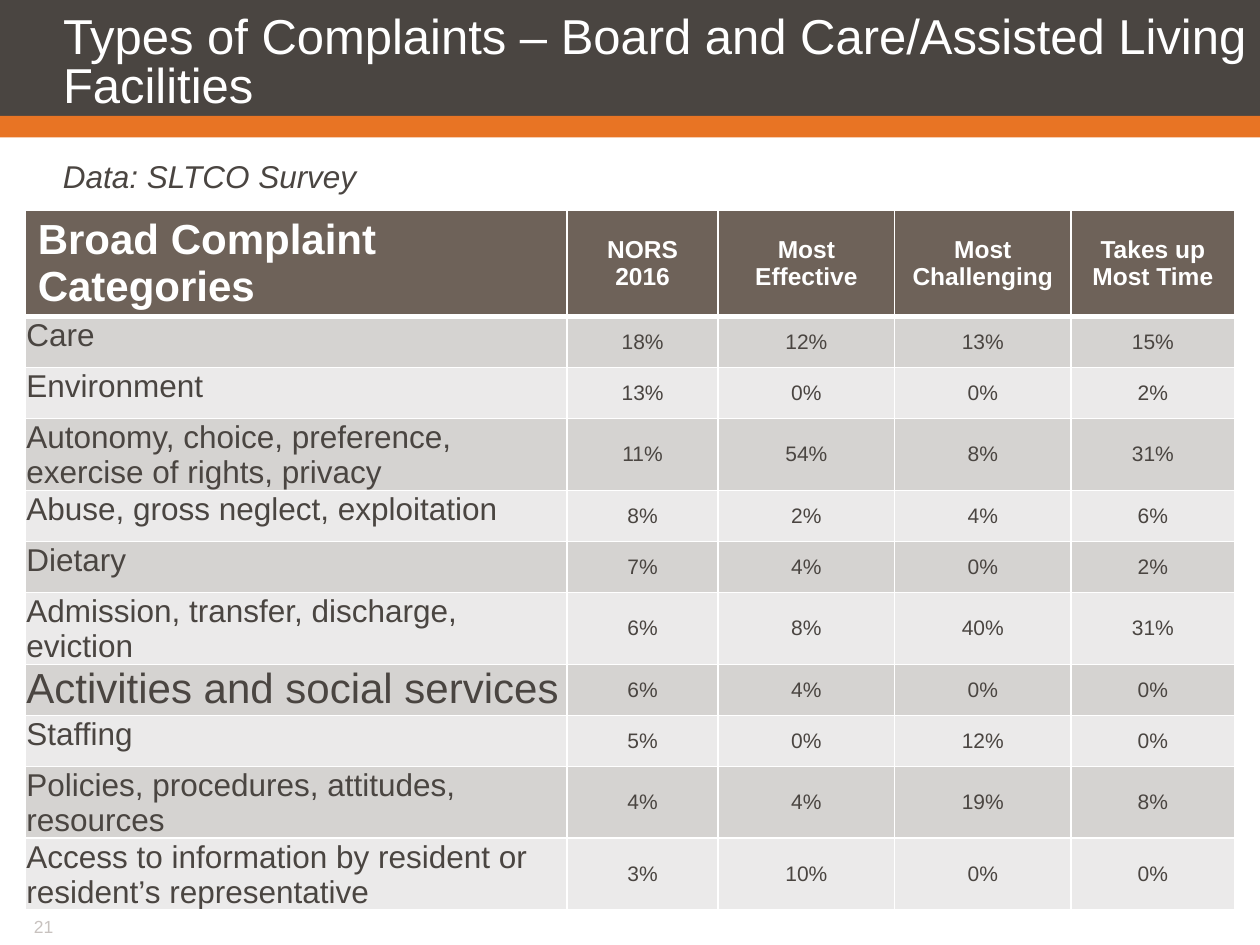
from lxml import etree
from pptx import Presentation
from pptx.dml.color import RGBColor
from pptx.enum.shapes import MSO_SHAPE
from pptx.enum.text import MSO_ANCHOR, MSO_AUTO_SIZE, PP_ALIGN
from pptx.oxml.ns import qn
from pptx.util import Inches, Pt

RECTANGLE = MSO_SHAPE.RECTANGLE
TOP, MIDDLE = MSO_ANCHOR.TOP, MSO_ANCHOR.MIDDLE
LEFT, CENTER = PP_ALIGN.LEFT, PP_ALIGN.CENTER
NO_AUTOFIT = MSO_AUTO_SIZE.NONE
TITLE_ONLY = 5

FONT = "Arial"
WHITE, DARK, ORANGE, GREY = "FFFFFF", "4A4541", "E87424", "C8C2BF"
HEADER_FILL, ODD_FILL, EVEN_FILL = "6E6259", "D5D3D1", "EBEAEA"

CELL_INSETS = (0.1, 0.05, 0.1, 0.05)
LABEL_INSETS = (0.01, 0.01, 0.01, 0)

COLUMN_WIDTHS = [4.3, 1.2, 1.4, 1.4, 1.3]
ROW_HEIGHT = 0.405
HEADINGS = ["Broad Complaint Categories", "NORS 2016", "Most Effective",
            "Most Challenging", "Takes up Most Time"]
COMPLAINTS = [
    ("Care", 18, 12, 13, 15),
    ("Environment", 13, 0, 0, 2),
    ("Autonomy, choice, preference, exercise of rights, privacy", 11, 54, 8, 31),
    ("Abuse, gross neglect, exploitation", 8, 2, 4, 6),
    ("Dietary", 7, 4, 0, 2),
    ("Admission, transfer, discharge, eviction", 6, 8, 40, 31),
    ("Activities and social services", 6, 4, 0, 0),
    ("Staffing", 5, 0, 12, 0),
    ("Policies, procedures, attitudes, resources", 4, 4, 19, 8),
    ("Access to information by resident or resident’s representative", 3, 10, 0, 0),
]
LARGE_LABEL = "Activities and social services"


def rgb(hex_text):
    return RGBColor.from_string(hex_text)


def write(frame, text, size, color, bold=False, italic=False, align=LEFT, line_spacing=None):
    para = frame.paragraphs[0]
    para.alignment = align
    if line_spacing:
        para.line_spacing = Pt(line_spacing)
    span = para.add_run()
    span.text = text
    font = span.font
    font.name, font.size, font.bold, font.italic = FONT, Pt(size), bold, italic
    font.color.rgb = rgb(color)


def set_insets(target, insets):
    """Set left, top, right and bottom margins of a text frame or cell."""
    (target.margin_left, target.margin_top,
     target.margin_right, target.margin_bottom) = map(Inches, insets)


def prepare_frame(frame, insets, anchor=TOP, wrap=True):
    frame.auto_size = NO_AUTOFIT
    frame.word_wrap = wrap
    frame.vertical_anchor = anchor
    set_insets(frame, insets)


def add_band(page, box, color):
    band = page.shapes.add_shape(RECTANGLE, *map(Inches, box))
    band.shadow.inherit = False
    band.fill.solid()
    band.fill.fore_color.rgb = rgb(color)
    band.line.fill.background()


def add_heading(page, box, text, stripe_height):
    left, top, width, height = box
    add_band(page, box, DARK)
    add_band(page, (left, top + height, width, stripe_height), ORANGE)
    title = page.shapes.title
    page.shapes.element.append(title.element)  # bring in front of the bands
    title.left, title.top, title.width, title.height = map(Inches, box)
    prepare_frame(title.text_frame, (0.5, 0.1, 0.1, 0), MIDDLE)
    write(title.text_frame, text, 28, WHITE, line_spacing=28)


def add_text(page, box, text, insets, wrap=True, **text_format):
    frame = page.shapes.add_textbox(*map(Inches, box)).text_frame
    prepare_frame(frame, insets, wrap=wrap)
    write(frame, text, **text_format)


def set_borders(cell, bottom_width):
    properties = cell._tc.get_or_add_tcPr()
    widths = {"a:lnL": 1, "a:lnR": 1, "a:lnT": 1, "a:lnB": bottom_width}
    for position, (tag, width) in enumerate(widths.items()):
        line = etree.Element(qn(tag), w=str(Pt(width)))
        fill = etree.SubElement(line, qn("a:solidFill"))
        etree.SubElement(fill, qn("a:srgbClr"), val=WHITE)
        properties.insert(position, line)


def fill_cell(cell, text, fill, insets=CELL_INSETS, anchor=MIDDLE, bottom_width=1,
              **text_format):
    set_insets(cell, insets)
    cell.vertical_anchor = anchor
    cell.fill.solid()
    cell.fill.fore_color.rgb = rgb(fill)
    set_borders(cell, bottom_width)
    write(cell.text_frame, text, **text_format)


def add_complaint_table(page, box):
    frame = page.shapes.add_table(len(COMPLAINTS) + 1, len(HEADINGS), *map(Inches, box))
    table = frame.table
    for column, width in zip(table.columns, COLUMN_WIDTHS):
        column.width = Inches(width)
    for row in table.rows:
        row.height = Inches(ROW_HEIGHT)

    for index, heading in enumerate(HEADINGS):
        first = index == 0
        fill_cell(table.cell(0, index), heading, HEADER_FILL, bottom_width=3,
                  anchor=TOP if first else MIDDLE, align=LEFT if first else CENTER,
                  size=24 if first else 14, color=WHITE, bold=True)

    for row_index, (label, *shares) in enumerate(COMPLAINTS, start=1):
        fill = ODD_FILL if row_index % 2 else EVEN_FILL
        fill_cell(table.cell(row_index, 0), label, fill, LABEL_INSETS, TOP,
                  size=24 if label == LARGE_LABEL else 18, color=DARK)
        for column_index, share in enumerate(shares, start=1):
            fill_cell(table.cell(row_index, column_index), f"{share}%", fill,
                      size=12, color=DARK, align=CENTER)


def main():
    deck = Presentation()
    deck.slide_width, deck.slide_height = Inches(10), Inches(7.5)
    page = deck.slides.add_slide(deck.slide_layouts[TITLE_ONLY])
    add_heading(page, (0, 0, 10, 0.92),
                "Types of Complaints – Board and Care/Assisted Living Facilities",
                stripe_height=0.17)
    add_text(page, (0.17, 7.27, 1.92, 0.18), "21", (0.1, 0, 0.1, 0.05), wrap=False,
             size=10, color=GREY)
    add_text(page, (0, 1.22, 10, 0.33), "Data: SLTCO Survey", (0.5, 0.03, 0, 0),
             size=18, color=DARK, italic=True)
    add_complaint_table(page, (0.2, 1.67, 9.6, 5.44))
    deck.save("out.pptx")


if __name__ == "__main__":
    main()
